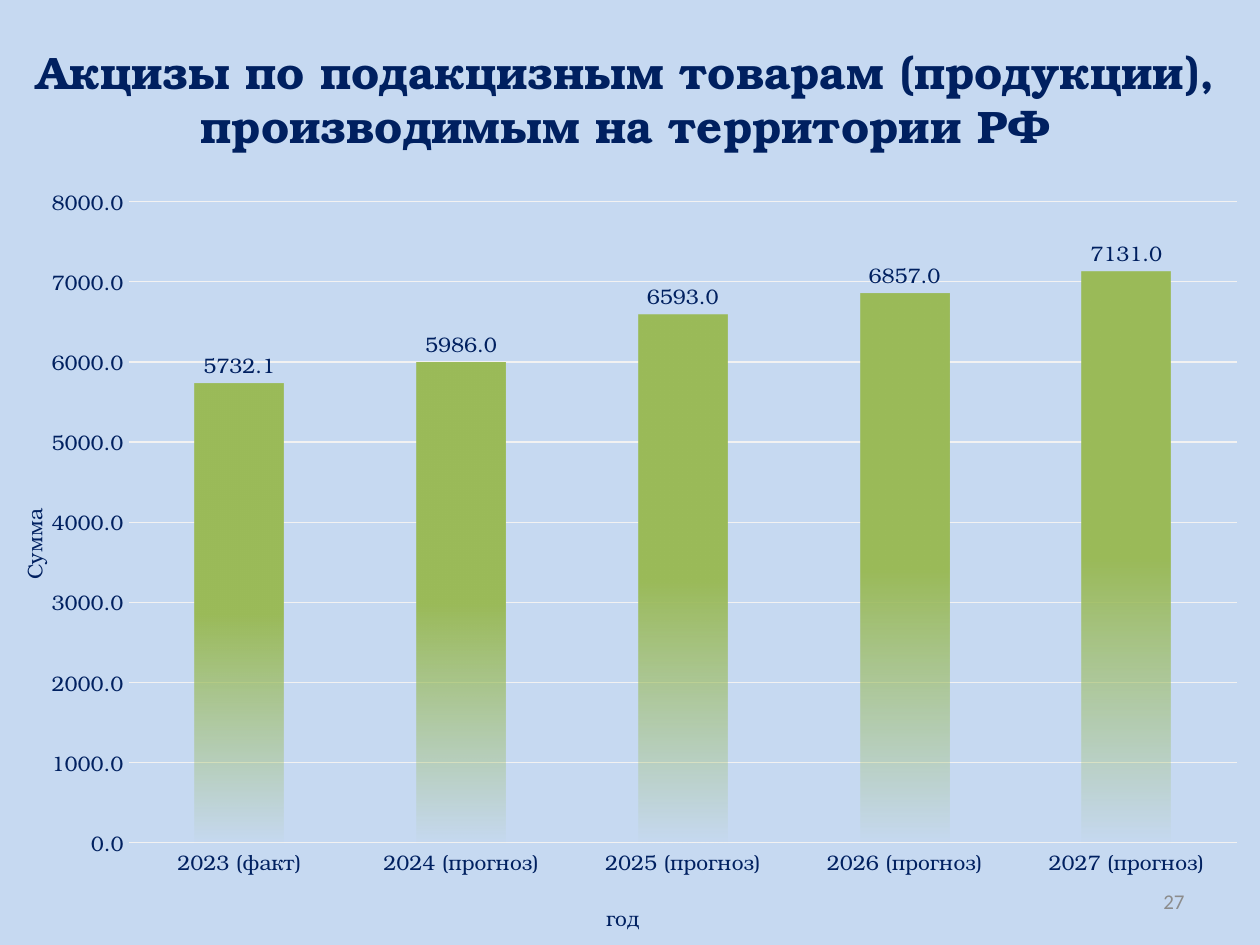
"""Build the excise revenue slide with a column chart of yearly amounts."""
from pptx import Presentation
from pptx import util as u
from pptx.chart.data import CategoryChartData
from pptx.dml.color import RGBColor
from pptx.enum import chart as c, text as t
from pptx.oxml import ns
from pptx.oxml.xmlchemy import OxmlElement

COLORS = {"background": "C6D9F1", "navy": "002060", "green": "9BBB59",
          "grid": "F2F2F2", "number": "8C8C8C"}
FONT = "TeX Gyre Bonum"
CHART_WIDTH, CHART_HEIGHT = 9.97, 6.29


def style_font(font, size, color="navy", name=FONT, bold=False):
    font.size = u.Pt(size)
    font.name = name
    font.bold = bold
    font.color.rgb = RGBColor.from_string(COLORS[color])


def place(element, index, **settings):
    for old_layout in element.findall(ns.qn("c:layout")):
        element.remove(old_layout)
    sizes = {"x": CHART_WIDTH, "w": CHART_WIDTH, "y": CHART_HEIGHT, "h": CHART_HEIGHT}
    layout = OxmlElement("c:layout")
    manual = OxmlElement("c:manualLayout")
    for tag, value in settings.items():
        setting = OxmlElement(f"c:{tag}")
        setting.set("val", str(value / sizes[tag]) if tag in sizes else value)
        manual.append(setting)
    layout.append(manual)
    element.insert(index, layout)


presentation = Presentation()
presentation.slide_width = u.Inches(10)
presentation.slide_height = u.Inches(7.5)
slide = presentation.slides.add_slide(presentation.slide_layouts[5])
slide.background.fill.solid()
slide.background.fill.fore_color.rgb = RGBColor.from_string(COLORS["background"])

title = slide.shapes.title
title.left, title.top = u.Inches(-0.03), u.Inches(0.36)
title.width, title.height = u.Inches(10), u.Inches(0.84)
title.text_frame.vertical_anchor = t.MSO_ANCHOR.MIDDLE
paragraph = title.text_frame.paragraphs[0]
paragraph.alignment = t.PP_ALIGN.CENTER
run = paragraph.add_run()
run.text = "Акцизы по подакцизным товарам (продукции), производимым на территории РФ"
style_font(run.font, 26, bold=True)

chart_data = CategoryChartData(number_format="0.0")
chart_data.categories = ["2023 (факт)"] + [f"{year} (прогноз)" for year in range(2024, 2028)]
chart_data.add_series("Сумма", [5732.1, 5986, 6593, 6857, 7131])
chart = slide.shapes.add_chart(
    c.XL_CHART_TYPE.COLUMN_CLUSTERED, u.Inches(0), u.Inches(1.21),
    u.Inches(CHART_WIDTH), u.Inches(CHART_HEIGHT), chart_data).chart
chart.has_title = False
chart.has_legend = False
style_font(chart.font, 10)
place(chart.plots[0]._element.getparent(), 0, layoutTarget="inner", xMode="edge",
      yMode="edge", x=1.02, y=0.39, w=8.8, h=5.09)

for axis, caption, x, y in ((chart.category_axis, "год", 4.78, 5.92),
                            (chart.value_axis, "Сумма", 0.11, 2.8)):
    axis.major_tick_mark = axis.minor_tick_mark = c.XL_TICK_MARK.NONE
    axis.format.line.fill.background()
    style_font(axis.tick_labels.font, 12)
    run = axis.axis_title.text_frame.paragraphs[0].add_run()
    run.text = caption
    style_font(run.font, 12)
    place(axis.axis_title._element, 1, xMode="edge", yMode="edge", x=x, y=y)

value_axis = chart.value_axis
value_axis.minimum_scale, value_axis.maximum_scale = 0, 8000
value_axis.major_unit = 1000
value_axis.tick_labels.number_format = "0.0"
value_axis.tick_labels.number_format_is_linked = False
grid_line = value_axis.major_gridlines.format.line
grid_line.width = u.Pt(0.75)
grid_line.color.rgb = RGBColor.from_string(COLORS["grid"])

plot = chart.plots[0]
plot.gap_width = 150
plot.vary_by_categories = False
series = plot.series[0]
fill = series.format.fill
fill.gradient()
fill.gradient_angle = 270
for stop, position in zip(fill.gradient_stops, (0.5, 1)):
    stop.position = position
    stop.color.rgb = RGBColor.from_string(COLORS["green"])
alpha = OxmlElement("a:alpha")
alpha.set("val", "0")
list(series._element.iter(ns.qn("a:srgbClr")))[-1].append(alpha)

labels = series.data_labels
labels.show_value = True
labels.position = c.XL_LABEL_POSITION.OUTSIDE_END
labels.number_format = "0.0"
labels.number_format_is_linked = False
style_font(labels.font, 12)

number_box = slide.shapes.add_textbox(u.Inches(7.17), u.Inches(6.95), u.Inches(2.33), u.Inches(0.4))
number_box.text_frame.word_wrap = True
number_box.text_frame.vertical_anchor = t.MSO_ANCHOR.MIDDLE
paragraph = number_box.text_frame.paragraphs[0]
paragraph.alignment = t.PP_ALIGN.RIGHT
run = paragraph.add_run()
run.text = "27"
style_font(run.font, 12, "number", "Calibri")

presentation.save("out.pptx")
